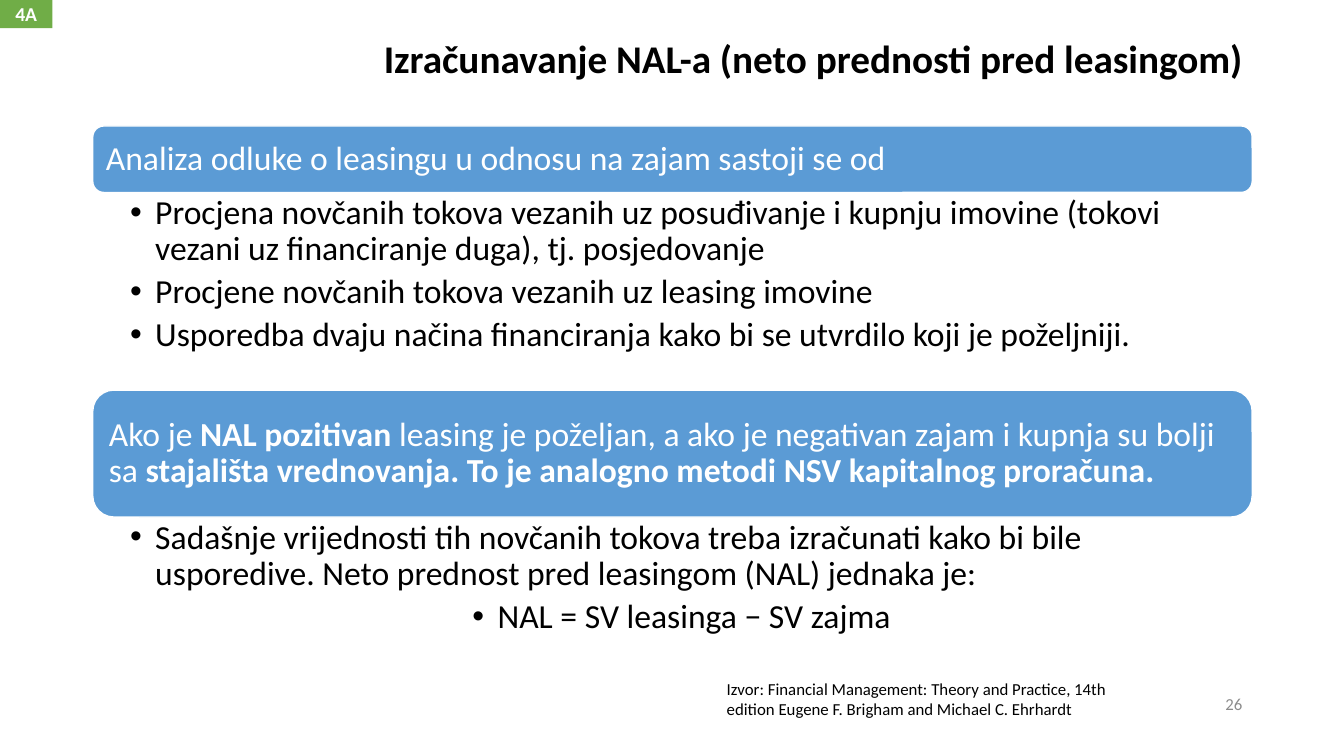
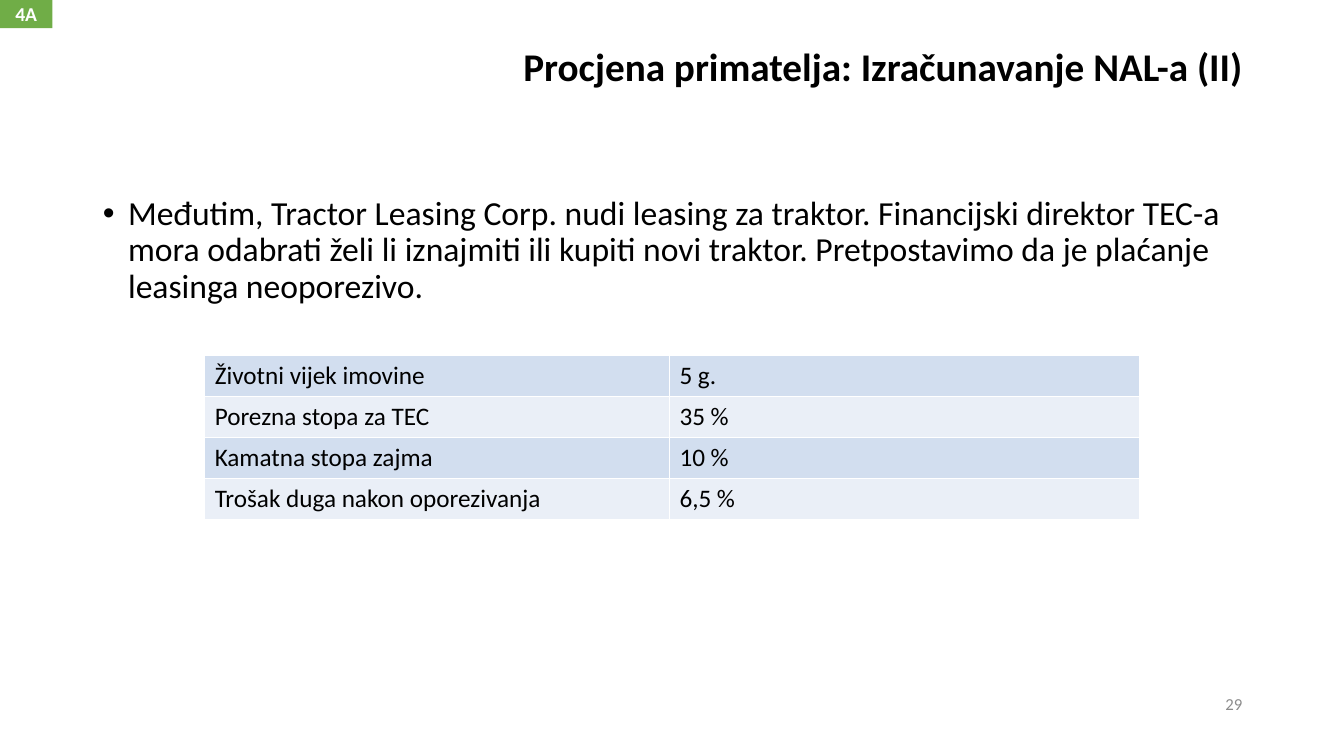
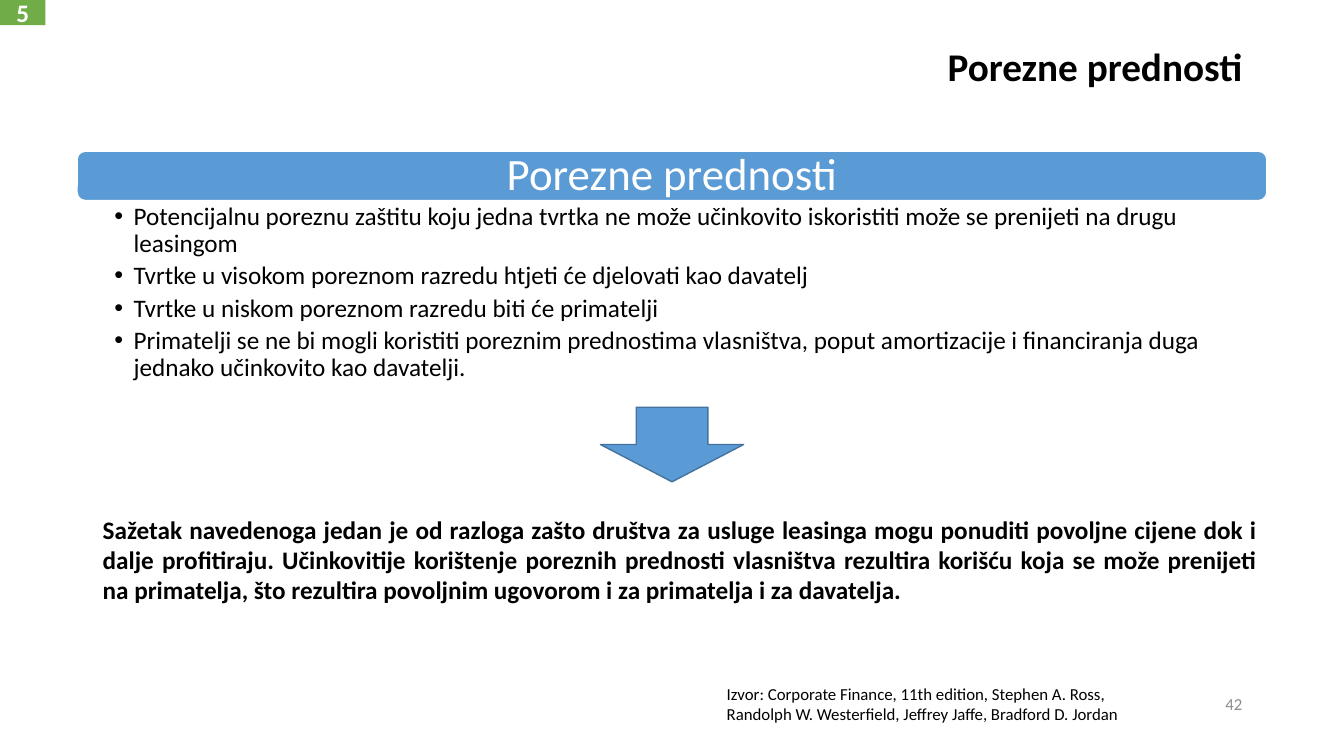
import lxml.etree
import pptx
import pptx.dml.color
import pptx.enum.shapes
import pptx.enum.text
import pptx.oxml.ns
import pptx.util

SLIDE_W, SLIDE_H = 13.33, 7.5
MARGIN, CONTENT_W = 0.92, 11.5
BLUE, BLUE_EDGE, GREEN = "5B9BD5", "43739E", "70AD47"
BLACK, WHITE, GREY = "000000", "FFFFFF", "8C8C8C"
ROW_FILLS = ("D2DEEF", "EAEFF7")
TITLE_LAYOUT, BODY_LAYOUT = 5, 1

ALIGN = pptx.enum.text.PP_ALIGN
ANCHOR = pptx.enum.text.MSO_ANCHOR
PRESET = pptx.enum.shapes.MSO_SHAPE
qn = pptx.oxml.ns.qn


def rgb(color):
    return pptx.dml.color.RGBColor.from_string(color)


def inches(*lengths):
    return [pptx.util.Inches(length) for length in lengths]


def apply(target, formats):
    for name, value in formats.items():
        setattr(target, name, value)


def add_bullet(paragraph, indent):
    """Give the paragraph a round bullet hanging by indent inches."""
    properties = paragraph._p.get_or_add_pPr()
    hang = pptx.util.Inches(indent)
    properties.set("marL", str(hang))
    properties.set("indent", str(-hang))
    font = lxml.etree.SubElement(properties, qn("a:buFont"))
    font.set("typeface", "Arial")
    lxml.etree.SubElement(properties, qn("a:buChar")).set("char", "•")


def write(frame, paragraphs, size, color=BLACK, bold=False, align=ALIGN.LEFT,
          anchor=ANCHOR.TOP, insets=(0.1, 0.05, 0.1, 0.05), bullet=0,
          line_spacing=1.0, gap=0):
    """Fill a frame; a paragraph is a string or a list of (text, bold) runs."""
    left, top, right, bottom = inches(*insets)
    apply(frame, dict(word_wrap=True, vertical_anchor=anchor,
                      auto_size=pptx.enum.text.MSO_AUTO_SIZE.NONE,
                      margin_left=left, margin_top=top,
                      margin_right=right, margin_bottom=bottom))
    for index, content in enumerate(paragraphs):
        paragraph = frame.add_paragraph() if index else frame.paragraphs[0]
        if bullet:
            add_bullet(paragraph, bullet)
        apply(paragraph, dict(alignment=align, line_spacing=line_spacing,
                              space_before=pptx.util.Pt(0),
                              space_after=pptx.util.Pt(gap)))
        runs = [(content, bold)] if isinstance(content, str) else content
        for text, run_bold in runs:
            run = paragraph.add_run()
            run.text = text
            apply(run.font, dict(name="Calibri", size=pptx.util.Pt(size), bold=run_bold))
            run.font.color.rgb = rgb(color)


def add_text(slide, box, paragraphs, size, **formats):
    frame = slide.shapes.add_textbox(*inches(*box)).text_frame
    write(frame, paragraphs, size, **formats)
    return frame


def add_block(slide, preset, box, fill, edge=None):
    block = slide.shapes.add_shape(preset, *inches(*box))
    block.shadow.inherit = False
    block.fill.solid()
    block.fill.fore_color.rgb = rgb(fill)
    if edge:
        block.line.color.rgb = rgb(edge)
        block.line.width = pptx.util.Pt(1)
    else:
        block.line.fill.background()
    return block


def add_banner(slide, box, content, size, align=ALIGN.LEFT):
    banner = add_block(slide, PRESET.ROUNDED_RECTANGLE, box, BLUE, WHITE)
    write(banner.text_frame, [content], size, color=WHITE, align=align,
          anchor=ANCHOR.MIDDLE, insets=(0.1, 0, 0.1, 0), line_spacing=0.9)


def add_points(slide, box, points, size, right_inset):
    """Bulleted list below a banner, its indent and gaps set by the text size."""
    return add_text(slide, box, points, size, insets=(0.37, 0.03, right_inset, 0.03),
                    bullet=round(size / 96, 2), line_spacing=0.9, gap=0.2 * size)


def place(placeholder, box):
    apply(placeholder, dict(zip(("left", "top", "width", "height"), inches(*box))))


def start_slide(deck, layout, title, number, badge, title_top=0.4,
                badge_box=(0.52, 0.28), badge_size=14):
    """Add a slide with the shared title, section badge and page number."""
    slide = deck.slides.add_slide(deck.slide_layouts[layout])
    heading = slide.shapes.title
    place(heading, (MARGIN, title_top, CONTENT_W, 0.57))
    write(heading.text_frame, [title], 28, bold=True, align=ALIGN.RIGHT,
          anchor=ANCHOR.MIDDLE, line_spacing=0.9)
    section = add_block(slide, PRESET.RECTANGLE, (0, 0, *badge_box), GREEN)
    write(section.text_frame, [badge], badge_size, color=WHITE, bold=True,
          align=ALIGN.CENTER, anchor=ANCHOR.MIDDLE, insets=(0, 0, 0, 0))
    add_text(slide, (MARGIN + CONTENT_W - 3, 6.78, 3, 0.4), [number], 12,
             color=GREY, align=ALIGN.RIGHT, anchor=ANCHOR.MIDDLE)
    return slide


def add_source(slide, top, citation):
    add_text(slide, (7.11, top, 4.3, 0.5), [citation], 12)


def add_cell_borders(cell, color):
    properties = cell._tc.get_or_add_tcPr()
    for side in ("a:lnL", "a:lnR", "a:lnT", "a:lnB"):
        border = lxml.etree.SubElement(properties, qn(side))
        border.set("w", str(pptx.util.Pt(1)))
        fill = lxml.etree.SubElement(border, qn("a:solidFill"))
        lxml.etree.SubElement(fill, qn("a:srgbClr")).set("val", color)


def add_banded_table(slide, left, top, widths, row_height, rows):
    box = inches(left, top, sum(widths), row_height * len(rows))
    table = slide.shapes.add_table(len(rows), len(widths), *box).table
    table.first_row = False
    for column, width in zip(table.columns, widths):
        column.width = pptx.util.Inches(width)
    for row_index, values in enumerate(rows):
        for column_index, value in enumerate(values):
            cell = table.cell(row_index, column_index)
            write(cell.text_frame, [value], 18)
            add_cell_borders(cell, WHITE)
            cell.fill.solid()
            cell.fill.fore_color.rgb = rgb(ROW_FILLS[row_index % 2])


def build_nal_method(deck):
    slide = start_slide(deck, TITLE_LAYOUT,
                        "Izračunavanje NAL-a (neto prednosti pred leasingom)",
                        "26", "4A", title_top=0.32)
    add_banner(slide, (MARGIN, 1.25, CONTENT_W, 0.66),
               "Analiza odluke o leasingu u odnosu na zajam sastoji se od", 24)
    add_points(slide, (MARGIN, 1.91, CONTENT_W, 1.72), [
        "Procjena novčanih tokova vezanih uz posuđivanje i kupnju imovine "
        "(tokovi vezani uz financiranje duga), tj. posjedovanje",
        "Procjene novčanih tokova vezanih uz leasing imovine",
        "Usporedba dvaju načina financiranja kako bi se utvrdilo koji je poželjniji.",
    ], 24, 0.19)
    add_banner(slide, (MARGIN, 3.87, CONTENT_W, 1.26), [
        ("Ako je ", False),
        ("NAL pozitivan", True),
        (" leasing je poželjan, a ako je negativan zajam i kupnja su bolji sa ", False),
        ("stajališta vrednovanja. To je analogno metodi NSV kapitalnog proračuna.", True),
    ], 24)
    formula = add_points(slide, (MARGIN, 5.13, CONTENT_W, 1.25), [
        "Sadašnje vrijednosti tih novčanih tokova treba izračunati kako bi bile "
        "usporedive. Neto prednost pred leasingom (NAL) jednaka je:",
        "NAL = SV leasinga − SV zajma",
    ], 24, 0.19)
    formula.paragraphs[-1].alignment = ALIGN.CENTER
    add_source(slide, 6.68, "Izvor: Financial Management: Theory and Practice, 14th "
                            "edition Eugene F. Brigham and Michael C. Ehrhardt")


def build_lessee_estimate(deck):
    slide = start_slide(deck, BODY_LAYOUT,
                        "Procjena primatelja: Izračunavanje NAL-a (II)", "29", "4A")
    offer = slide.placeholders[1]
    place(offer, (MARGIN, 1.9, CONTENT_W, 1.4))
    write(offer.text_frame, [
        "Međutim, Tractor Leasing Corp. nudi leasing za traktor. Financijski direktor "
        "TEC-a mora odabrati želi li iznajmiti ili kupiti novi traktor. Pretpostavimo "
        "da je plaćanje leasinga neoporezivo.",
    ], 24, bullet=0.25, line_spacing=0.9)
    add_banded_table(slide, 2.03, 3.53, (4.61, 4.66), 0.4, [
        ("Životni vijek imovine", "5 g."),
        ("Porezna stopa za TEC", "35 %"),
        ("Kamatna stopa zajma", "10 %"),
        ("Trošak duga nakon oporezivanja", "6,5 %"),
    ])


def build_tax_benefits(deck):
    slide = start_slide(deck, TITLE_LAYOUT, "Porezne prednosti", "42", "5",
                        badge_box=(0.45, 0.25), badge_size=18)
    panel_w, arrow_w = 11.8, 1.42
    panel_left = (SLIDE_W - panel_w) / 2
    add_banner(slide, (panel_left, 1.5, panel_w, 0.49), "Porezne prednosti", 32,
               ALIGN.CENTER)
    add_points(slide, (panel_left, 1.99, panel_w, 1.66), [
        "Potencijalnu poreznu zaštitu koju jedna tvrtka ne može učinkovito "
        "iskoristiti može se prenijeti na drugu leasingom",
        "Tvrtke u visokom poreznom razredu htjeti će djelovati kao davatelj",
        "Tvrtke u niskom poreznom razredu biti će primatelji",
        "Primatelji se ne bi mogli koristiti poreznim prednostima vlasništva, poput "
        "amortizacije i financiranja duga jednako učinkovito kao davatelji.",
    ], 18, 0.14)
    add_block(slide, PRESET.DOWN_ARROW, ((SLIDE_W - arrow_w) / 2, 4.04, arrow_w, 0.74),
              BLUE, BLUE_EDGE)
    add_text(slide, (MARGIN, 5.05, 11.65, 1.01), [
        "Sažetak navedenoga jedan je od razloga zašto društva za usluge leasinga mogu "
        "ponuditi povoljne cijene dok i dalje profitiraju. Učinkovitije korištenje "
        "poreznih prednosti vlasništva rezultira korišću koja se može prenijeti na "
        "primatelja, što rezultira povoljnim ugovorom i za primatelja i za davatelja.",
    ], 18, bold=True, align=ALIGN.JUSTIFY)
    add_source(slide, 6.73, "Izvor: Corporate Finance, 11th edition, Stephen A. Ross, "
                            "Randolph W. Westerfield, Jeffrey Jaffe, Bradford D. Jordan")


def main():
    deck = pptx.Presentation()
    deck.slide_width, deck.slide_height = inches(SLIDE_W, SLIDE_H)
    build_nal_method(deck)
    build_lessee_estimate(deck)
    build_tax_benefits(deck)
    deck.save("out.pptx")


if __name__ == "__main__":
    main()
